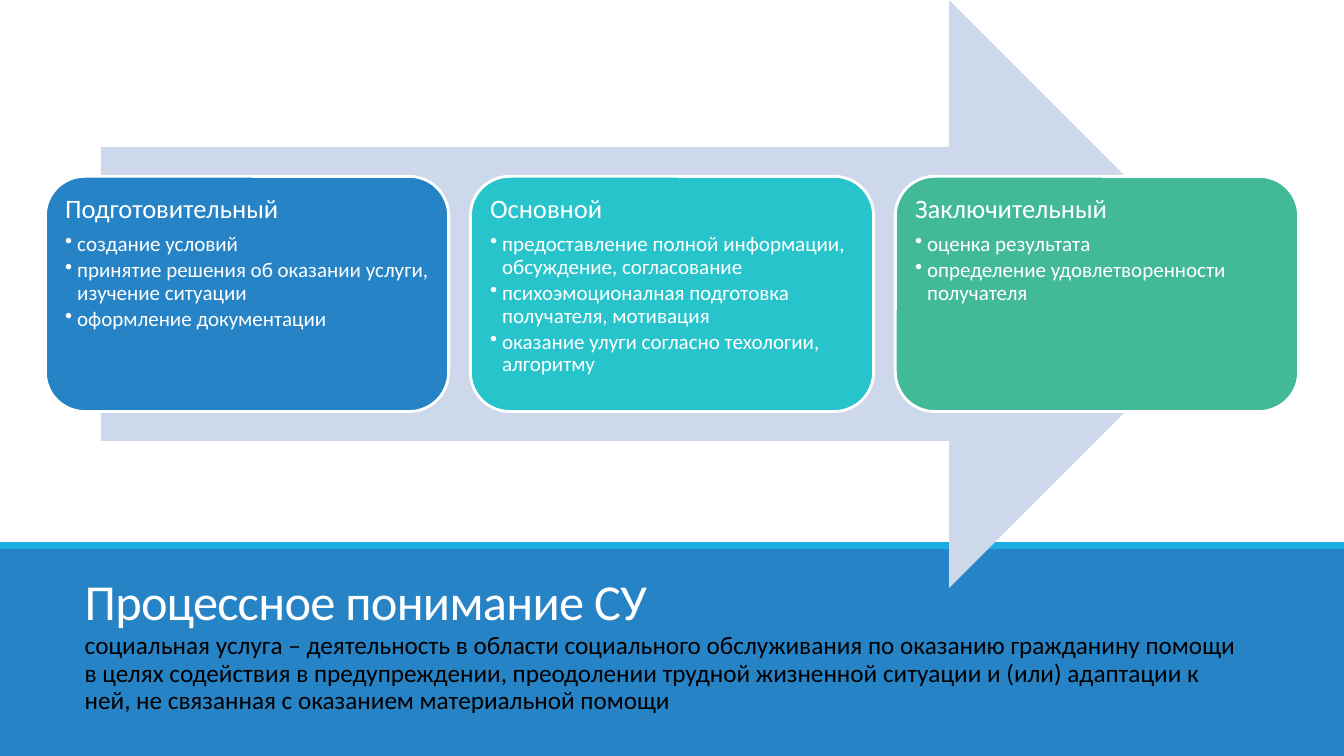
"""Build the slide about the three stages of a social service."""
import dataclasses

import pptx
import pptx.dml.color
import pptx.enum.shapes
import pptx.enum.text
import pptx.util
from lxml import etree
from pptx.oxml import ns

SHAPE = pptx.enum.shapes.MSO_SHAPE
ANCHOR = pptx.enum.text.MSO_ANCHOR
WIDTH, HEIGHT = pptx.util.Inches(13.33), pptx.util.Inches(7.5)
FONT = "Calibri"
COLORS = {
    "white": "FFFFFF",
    "black": "000000",
    "blue": "2683C6",
    "sky": "1CADE4",
    "pale": "CDD9EA",
    "teal": "28C4CC",
    "green": "42BA97",
}


@dataclasses.dataclass(frozen=True)
class Box:
    """Hold a position in hundredths of the slide's width and height."""
    left: float
    top: float
    width: float
    height: float

    def emu(self) -> tuple[int, int, int, int]:
        """Return left, top, width and height in EMU."""
        return (int(WIDTH * self.left / 100), int(HEIGHT * self.top / 100),
                int(WIDTH * self.width / 100), int(HEIGHT * self.height / 100))


@dataclasses.dataclass(frozen=True)
class Stage:
    """Describe one stage card."""
    title: str
    color: str
    points: tuple[str, ...]


STAGES = (
    Stage("Подготовительный", "blue", (
        "создание условий",
        "принятие решения об оказании услуги, изучение ситуации",
        "оформление документации")),
    Stage("Основной", "teal", (
        "предоставление полной информации, обсуждение, согласование",
        "психоэмоционалная подготовка получателя, мотивация",
        "оказание улуги согласно техологии, алгоритму")),
    Stage("Заключительный", "green", (
        "оценка результата",
        "определение удовлетворенности получателя")),
)
TITLE = "Процессное понимание СУ"
DEFINITION = (
    "социальная услуга – деятельность в области социального обслуживания "
    "по оказанию гражданину помощи в целях содействия в предупреждении, "
    "преодолении трудной жизненной ситуации и (или) адаптации к ней, "
    "не связанная с оказанием материальной помощи")
FIRST_CARD = Box(3.38, 23.33, 30, 31.1)
CARD_PITCH = 31.62
CARD_PAD_X, CARD_PAD_Y = 0.86, 1.5


def rgb(name: str) -> pptx.dml.color.RGBColor:
    """Return a named colour."""
    return pptx.dml.color.RGBColor.from_string(COLORS[name])


def add_shape(s, kind, box: Box, fill: str, line: str | None = None):
    """Draw a filled preset shape with an optional outline."""
    sp = s.shapes.add_shape(kind, *box.emu())
    sp.shadow.inherit = False
    sp.fill.solid()
    sp.fill.fore_color.rgb = rgb(fill)
    if line:
        sp.line.color.rgb = rgb(line)
        sp.line.width = pptx.util.Pt(2)
    else:
        sp.line.fill.background()
    return sp


def set_frame(tf, inset_x: float, inset_y: float, anchor=ANCHOR.TOP) -> None:
    """Set the wrapping, insets and anchor of a text frame."""
    tf.word_wrap = True
    tf.auto_size = pptx.enum.text.MSO_AUTO_SIZE.NONE
    tf.vertical_anchor = anchor
    tf.margin_left = tf.margin_right = pptx.util.Inches(inset_x)
    tf.margin_top = tf.margin_bottom = pptx.util.Inches(inset_y)


def write(p, text: str, *, size: float, color: str = "white",
          spacing: float = 0.9, after: float = 0, bullet: bool = False,
          tracking: float = 0) -> None:
    """Write one formatted paragraph."""
    p.alignment = pptx.enum.text.PP_ALIGN.LEFT
    p.line_spacing = spacing
    p.space_before = pptx.util.Pt(0)
    p.space_after = pptx.util.Pt(after)
    if bullet:
        p.level = 1
        pPr = p._p.get_or_add_pPr()
        indent = pptx.util.Inches(0.12)
        pPr.set("marL", str(indent))
        pPr.set("indent", str(-indent))
        etree.SubElement(pPr, ns.qn("a:buChar")).set("char", "•")
    r = p.add_run()
    r.text = text
    r.font.name = FONT
    r.font.size = pptx.util.Pt(size)
    r.font.bold = False
    r.font.color.rgb = rgb(color)
    rPr = r._r.get_or_add_rPr()
    rPr.set("cap", "none")
    if tracking:
        rPr.set("spc", str(int(tracking * 100)))


def fill_placeholder(s, sp, box: Box, text: str, anchor=ANCHOR.TOP,
                     **style) -> None:
    """Move a placeholder to the front and write its text."""
    sp.left, sp.top, sp.width, sp.height = box.emu()
    s.shapes.element.append(sp.element)
    set_frame(sp.text_frame, 0.1, 0, anchor)
    write(sp.text_frame.paragraphs[0], text, **style)


def add_card(s, stage: Stage, index: int) -> None:
    """Draw one stage card with its heading and bullets."""
    box = dataclasses.replace(
        FIRST_CARD, left=FIRST_CARD.left + index * CARD_PITCH)
    add_shape(s, SHAPE.ROUNDED_RECTANGLE, box, stage.color, "white")
    inner = Box(box.left + CARD_PAD_X, box.top + CARD_PAD_Y,
                box.width - 2 * CARD_PAD_X, box.height - 2 * CARD_PAD_Y)
    tf = s.shapes.add_textbox(*inner.emu()).text_frame
    set_frame(tf, 0.08, 0.08)
    write(tf.paragraphs[0], stage.title, size=19, after=6.65)
    for point in stage.points:
        write(tf.add_paragraph(), point, size=15, after=2.25, bullet=True)


def main() -> None:
    """Build and save the presentation."""
    prs = pptx.Presentation()
    prs.slide_width, prs.slide_height = WIDTH, HEIGHT
    s = prs.slides.add_slide(prs.slide_layouts.get_by_name("Section Header"))
    title, body = s.placeholders
    add_shape(s, SHAPE.RECTANGLE, Box(0, 72.22, 100, 27.78), "blue")
    add_shape(s, SHAPE.RECTANGLE, Box(0, 71.7, 100, 0.9), "sky")
    fill_placeholder(s, title, Box(5.55, 74.53, 88.45, 8.93), TITLE,
                     ANCHOR.BOTTOM, size=36, spacing=0.85, tracking=-0.5)
    add_shape(s, SHAPE.RIGHT_ARROW, Box(7.5, 0, 85, 77.78), "pale")
    for index, stage in enumerate(STAGES):
        add_card(s, stage, index)
    fill_placeholder(s, body, Box(5.55, 83.73, 88.22, 12.4), DEFINITION,
                     size=18, color="black", after=6)
    prs.save("out.pptx")


if __name__ == "__main__":
    main()
